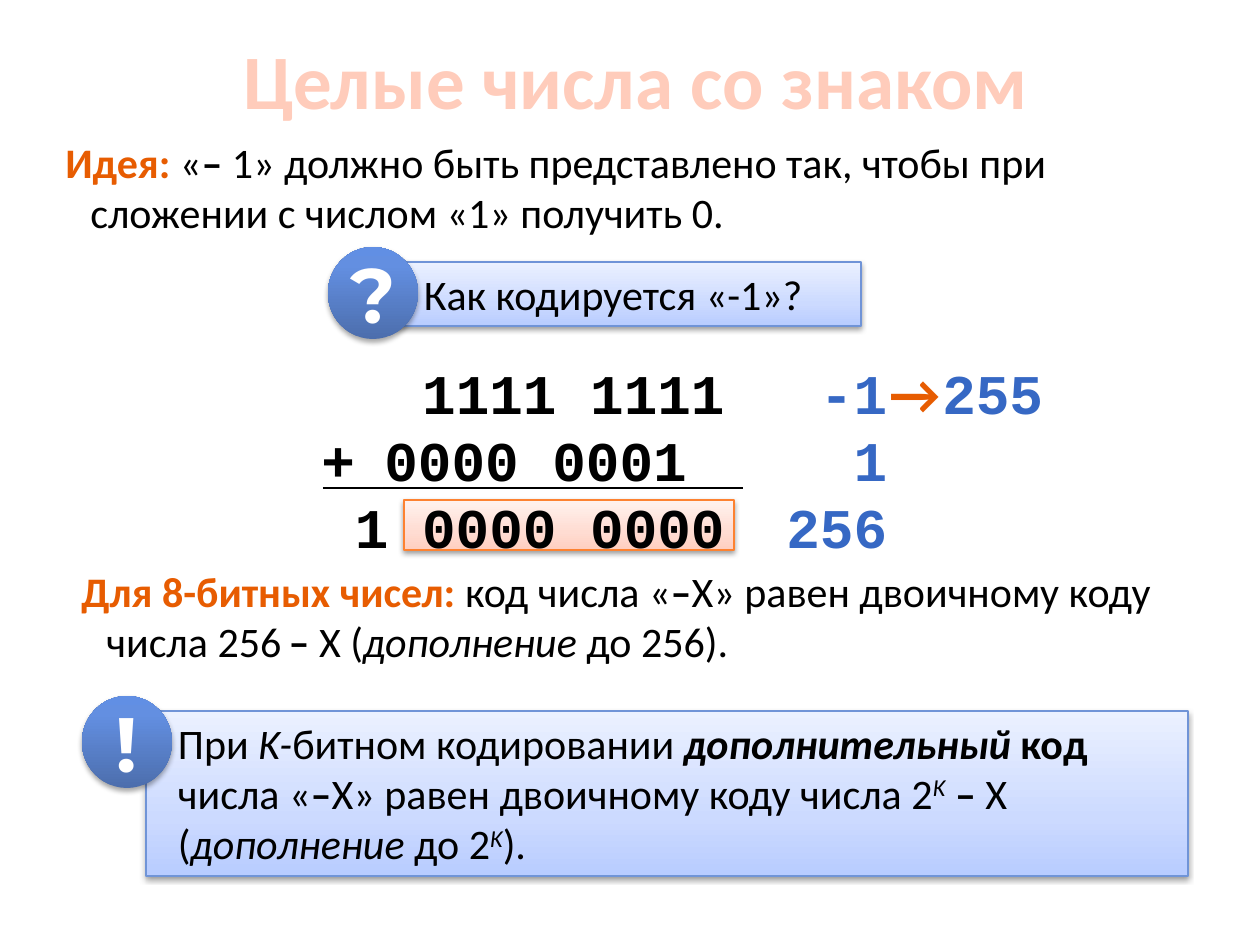
from copy import deepcopy

from lxml import etree
from pptx import Presentation
from pptx.dml.color import RGBColor
from pptx.enum.shapes import MSO_CONNECTOR, MSO_SHAPE
from pptx.enum.text import MSO_ANCHOR, PP_ALIGN
from pptx.oxml.ns import qn
from pptx.util import Pt

RECTANGLE, OVAL = MSO_SHAPE.RECTANGLE, MSO_SHAPE.OVAL
STRAIGHT = MSO_CONNECTOR.STRAIGHT
CENTER, MIDDLE = PP_ALIGN.CENTER, MSO_ANCHOR.MIDDLE

BLACK = RGBColor(0x00, 0x00, 0x00)
WHITE = RGBColor(0xFF, 0xFF, 0xFF)
PEACH = RGBColor(0xFF, 0xCC, 0xBB)
ORANGE = RGBColor(0xE7, 0x5C, 0x01)
BLUE = RGBColor(0x36, 0x68, 0xC4)
PANEL_LINE = RGBColor(0x70, 0x94, 0xD7)
RESULT_LINE = RGBColor(0xFD, 0x82, 0x31)
PANEL_STOPS = [(0, RGBColor(0xB8, 0xCC, 0xFF)), (0.35, RGBColor(0xCC, 0xDA, 0xFF)),
               (1, RGBColor(0xEB, 0xF1, 0xFF))]
BADGE_STOPS = [(0, RGBColor(0x4C, 0x6E, 0xAD)), (0.8, RGBColor(0x63, 0x8F, 0xE1)),
               (1, RGBColor(0x61, 0x8F, 0xE4))]
RESULT_STOPS = [(0, RGBColor(0xFF, 0xCE, 0xBF)), (0.35, RGBColor(0xFF, 0xDC, 0xD2)),
                (1, RGBColor(0xFF, 0xF2, 0xEE))]

BODY, MONO, BADGE = "Calibri", "Courier New", "Montserrat"
BODY_SIZE, MONO_SIZE, HEAD_SIZE, GAP_SIZE = 24, 32, 44, 2
CHAR = Pt(MONO_SIZE * 0.6)
HANGING = 25


def px(length):
    """Turn slide pixels into EMU."""
    return round(length * 914400 / 126)


def write(paragraph, parts, font=BODY, size=BODY_SIZE, color=BLACK):
    """Add (text, font settings) parts to a paragraph, breaking lines at None."""
    for part in parts:
        if part is None:
            paragraph.add_line_break()
            continue
        text, settings = part
        run = paragraph.add_run()
        run.text = text
        run.font.name = settings.get("font", font)
        run.font.size = Pt(settings.get("size", size))
        run.font.bold = settings.get("bold", False)
        run.font.italic = settings.get("italic", False)
        run.font.color.rgb = settings.get("color", color)
        if "raised" in settings:
            run.font._element.set("baseline", "30000")


def indent(paragraph, left, first=0):
    """Set a paragraph's left and first-line indents in EMU."""
    properties = paragraph._p.get_or_add_pPr()
    properties.set("marL", str(left))
    properties.set("indent", str(first))


def text_frame(shapes, box, wrap=True):
    """Add a text box and return its frame."""
    frame = shapes.add_textbox(*map(px, box)).text_frame
    frame.word_wrap = wrap
    return frame


def shaded_shape(shapes, kind, box, stops, line=None, opacity=38, distance=1.6):
    """Add a gradient shape with a soft shadow below it."""
    shape = shapes.add_shape(kind, *map(px, box))
    shape.fill.gradient()
    shape.fill.gradient_angle = 90
    stop_list = shape._element.spPr.find(".//" + qn("a:gsLst"))
    while len(stop_list) < len(stops):
        stop_list.append(deepcopy(stop_list[-1]))
    for stop, (position, color) in zip(shape.fill.gradient_stops, stops):
        stop.position = position
        stop.color.rgb = color
    if line is None:
        shape.line.fill.background()
    else:
        shape.line.color.rgb = line
        shape.line.width = Pt(0.75)
    shape.shadow.inherit = False
    effects = shape._element.spPr.find(qn("a:effectLst"))
    shadow = etree.SubElement(effects, qn("a:outerShdw"), blurRad=str(Pt(3.1)),
                              dist=str(Pt(distance)), dir="5400000", rotWithShape="0")
    shade = etree.SubElement(shadow, qn("a:srgbClr"), val="000000")
    etree.SubElement(shade, qn("a:alpha"), val=str(opacity * 1000))
    return shape


def title(slide, box, text):
    """Place the centred slide title."""
    frame = text_frame(slide.shapes, box)
    frame.vertical_anchor = MIDDLE
    heading = frame.paragraphs[0]
    heading.alignment = CENTER
    write(heading, [(text, {"bold": True})], size=HEAD_SIZE, color=PEACH)


def statement(slide, box, parts):
    """Place a body paragraph with a hanging indent."""
    paragraph = text_frame(slide.shapes, box).paragraphs[0]
    indent(paragraph, px(HANGING), -px(HANGING))
    write(paragraph, parts)


def callout(slide, box, mark, parts):
    """Place a shaded panel with a round badge over its upper left corner."""
    left, top, width, height = box
    group = slide.shapes.add_group_shape()
    panel = shaded_shape(group.shapes, RECTANGLE, (left + 64, top + 15, width - 64, height - 15),
                         PANEL_STOPS, PANEL_LINE)
    frame = panel.text_frame
    frame.word_wrap = True
    frame.margin_left = px(32)
    frame.vertical_anchor = MSO_ANCHOR.TOP
    frame.paragraphs[0].alignment = PP_ALIGN.LEFT
    write(frame.paragraphs[0], parts)

    badge = shaded_shape(group.shapes, OVAL, (left, top, 90, 92), BADGE_STOPS,
                         opacity=35, distance=1.8).text_frame
    badge.word_wrap = False
    badge.vertical_anchor = MIDDLE
    badge.paragraphs[0].alignment = CENTER
    write(badge.paragraphs[0], [(mark, {"bold": True})], BADGE, HEAD_SIZE, WHITE)


def column(slide, box, rows, color):
    """Place monospaced rows, each indented by a number of characters."""
    frame = text_frame(slide.shapes, box, wrap=False)
    for index, (characters, parts) in enumerate(rows):
        row = frame.add_paragraph() if index else frame.paragraphs[0]
        indent(row, round(characters * CHAR))
        tabs = etree.SubElement(row._p.get_or_add_pPr(), qn("a:tabLst"))
        etree.SubElement(tabs, qn("a:tab"), pos=str(3 * CHAR), algn="l")
        write(row, [(text, {"bold": True, **settings}) for text, settings in parts],
              MONO, MONO_SIZE, color)


def addition(slide, box):
    """Place the binary sum, its rule, the kept byte and the decimal check."""
    left, top, width, height = box
    shaded_shape(slide.shapes, RECTANGLE, (left + 95, top + 148, 330, 50),
                 RESULT_STOPS, RESULT_LINE)
    column(slide, (left, top, 467, height),
           [(3, [("1111 1111", {})]), (0, [("+\t0000 0001", {})]), (1, [("1 0000 0000", {})])],
           BLACK)
    rule = slide.shapes.add_connector(STRAIGHT, px(left + 14), px(top + 136),
                                      px(left + 434), px(top + 136))
    rule.line.color.rgb = BLACK
    rule.line.width = Pt(1.5)
    etree.SubElement(rule._element.spPr, qn("a:effectLst"))
    gap = (" ", {"size": GAP_SIZE})
    arrow = ("→", {"font": BODY, "color": ORANGE})
    column(slide, (left + 465, top, width - 465, height),
           [(1, [("-1", {}), gap, arrow, gap, ("255", {})]),
            (2, [("1", {})]), (0, [("256", {})])], BLUE)


def main():
    """Build the slide about signed integers."""
    deck = Presentation()
    deck.slide_width, deck.slide_height = px(1260), px(945)
    slide = deck.slides.add_slide(deck.slide_layouts[6])
    plain, bold, italic = {}, {"bold": True}, {"italic": True}
    lead = {"bold": True, "color": ORANGE}
    power = {"italic": True, "raised": True}

    title(slide, (69, 0, 1134, 158), "Целые числа со знаком")
    statement(slide, (53, 130, 1157, 115), [
        ("Идея: ", lead), ("«", plain), ("– ", bold),
        ("1» должно быть представлено так, чтобы при сложении с числом «1» получить 0.", plain)])
    callout(slide, (328, 247, 533, 79), "?", [("Как кодируется «-1»?", plain)])
    addition(slide, (309, 352, 830, 216))
    statement(slide, (69, 559, 1113, 115), [
        ("Для 8-битных чисел: ", lead), ("код числа «", plain), ("–", bold),
        ("X» равен двоичному коду числа 256", plain), (" ", {"bold": True, "size": 18}),
        ("– ", bold), ("X (", plain), ("дополнение", italic), (" до 256).", plain)])
    callout(slide, (82, 696, 1106, 180), "!", [
        ("При ", plain), ("K-", italic), ("битном кодировании ", plain),
        ("дополнительный", {"bold": True, "italic": True}), (" код", bold), None,
        ("числа «", plain), ("–", bold), ("X» равен двоичному коду числа 2", plain),
        ("K", power), (" – ", bold), ("X", plain), None,
        ("(", plain), ("дополнение", italic), (" до 2", plain), ("K", power), (").", plain)])
    deck.save("out.pptx")


if __name__ == "__main__":
    main()
